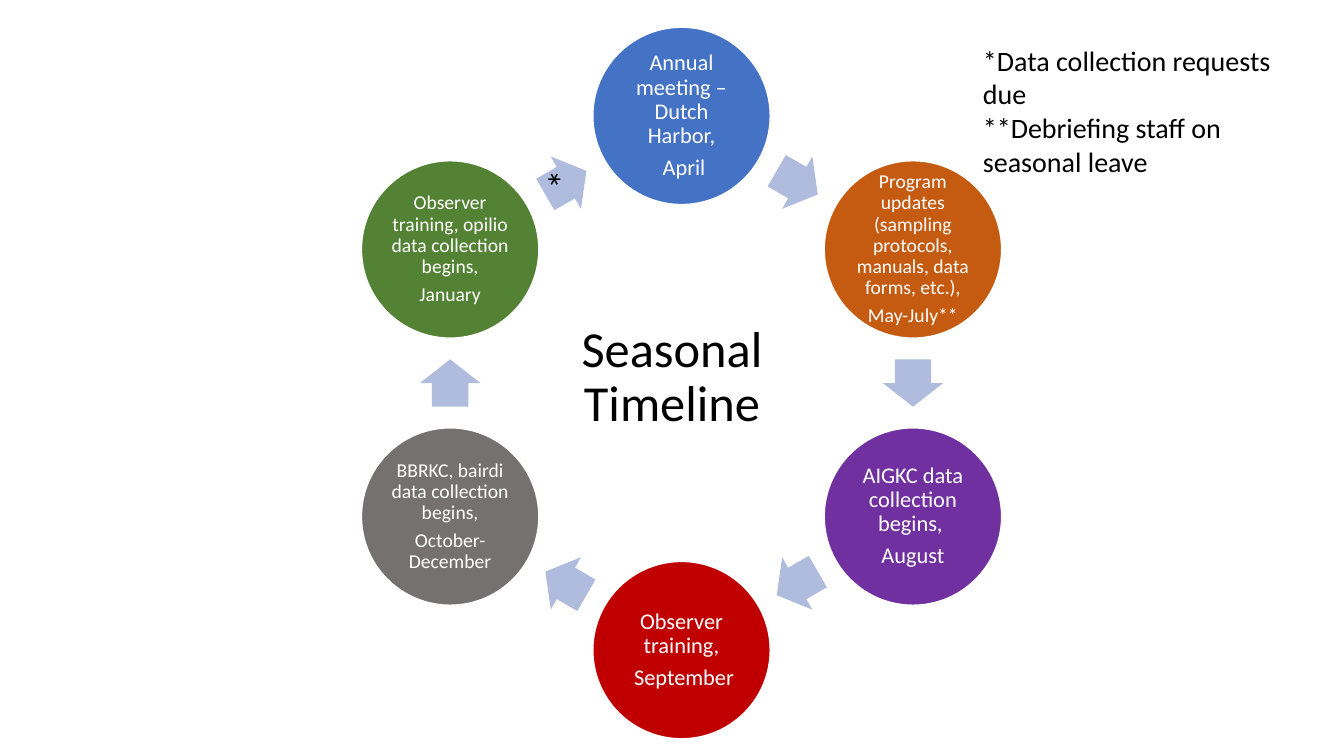
import math

from pptx import Presentation
from pptx import util as u
from pptx.dml.color import RGBColor
from pptx.enum import shapes, text

EMU_PER_PX = 9144  # 100 px to the inch
FONT = "Calibri"
COLORS = {
    "black": "000000", "white": "FFFFFF", "arrow": "B0BCDE",
    "blue": "4472C4", "orange": "C55A11", "purple": "7030A0",
    "red": "C00000", "gray": "767171", "green": "548235",
}
CENTER_X, CENTER_Y = 676, 380
RING_RADIUS = 265
CIRCLE_SIZE = 176
ARROW_W, ARROW_H = 47, 60

# Clockwise from the top: fill, text size, event, month
STAGES = [
    ("blue", 16, "Annual meeting – Dutch Harbor,", " April"),
    ("orange", 14, "Program updates (sampling protocols, manuals, data forms, etc.),",
     "May-July**"),
    ("purple", 16, "AIGKC data collection begins, ", "August"),
    ("red", 16, "Observer training,", " September"),
    ("gray", 14, "BBRKC, bairdi data collection begins,", "October-December"),
    ("green", 14, "Observer training, opilio data collection begins,", "January"),
]


def px(n):
    return u.Emu(round(n * EMU_PER_PX))


def rgb(name):
    return RGBColor.from_string(COLORS[name])


def on_ring(radius, degrees):
    a = math.radians(degrees)
    return CENTER_X + radius * math.cos(a), CENTER_Y + radius * math.sin(a)


def write(sp, lines, size, color, inset=None, centered=True, after=0):
    """Fill a shape with one paragraph per line; after is a share of the text size."""
    tf = sp.text_frame
    tf.word_wrap = True
    if inset is not None:
        tf.margin_left = tf.margin_right = tf.margin_top = tf.margin_bottom = px(inset)
    if centered:
        tf.vertical_anchor = text.MSO_ANCHOR.MIDDLE
    tf.text = "\n".join(lines)
    for p in tf.paragraphs:
        if centered:
            p.alignment = text.PP_ALIGN.CENTER
            p.line_spacing = 0.9
        p.space_after = u.Pt(size * after)
        for r in p.runs:
            r.font.name = FONT
            r.font.size = u.Pt(size)
            r.font.color.rgb = rgb(color)


def add_text(s, x, y, w, h, lines, size, **style):
    sp = s.shapes.add_textbox(px(x), px(y), px(w), px(h))
    write(sp, lines, size, "black", **style)
    return sp


def add_centered_shape(s, kind, cx, cy, w, h, fill):
    sp = s.shapes.add_shape(kind, px(cx - w / 2), px(cy - h / 2), px(w), px(h))
    sp.shadow.inherit = False
    sp.fill.solid()
    sp.fill.fore_color.rgb = rgb(fill)
    return sp


def add_stage(s, angle, fill, size, event, month):
    cx, cy = on_ring(RING_RADIUS, angle)
    sp = add_centered_shape(s, shapes.MSO_SHAPE.OVAL, cx, cy,
                            CIRCLE_SIZE, CIRCLE_SIZE, fill)
    sp.line.color.rgb = rgb("white")
    sp.line.width = u.Pt(1)
    write(sp, [event, month], size, "white", inset=2, after=0.35)


def add_arrow(s, angle):
    """Place an arrow midway between two circles, pointing clockwise."""
    cx, cy = on_ring(RING_RADIUS * math.cos(math.radians(30)), angle)
    sp = add_centered_shape(s, shapes.MSO_SHAPE.RIGHT_ARROW, cx, cy,
                            ARROW_W, ARROW_H, "arrow")
    sp.line.fill.background()
    sp.adjustments[0], sp.adjustments[1] = 0.6, 0.5
    sp.rotation = (angle + 90) % 360


def main():
    prs = Presentation()
    prs.slide_width, prs.slide_height = px(1333), px(750)
    s = prs.slides.add_slide(prs.slide_layouts[6])

    add_text(s, 549, 284, 235, 182, ["Seasonal Timeline"], 36)
    step = 360 / len(STAGES)
    for i, stage in enumerate(STAGES):
        angle = -90 + i * step
        add_stage(s, angle, *stage)
        add_arrow(s, angle + step / 2)

    star = add_text(s, 538, 168, 33, 36, ["*"], 28, inset=0, after=0.35)
    star.rotation = 330
    notes = add_text(s, 965, 38, 347, 145,
                     ["*Data collection requests due",
                      "**Debriefing staff on seasonal leave"], 20, centered=False)
    notes.text_frame.auto_size = text.MSO_AUTO_SIZE.SHAPE_TO_FIT_TEXT
    prs.save("out.pptx")


if __name__ == "__main__":
    main()
